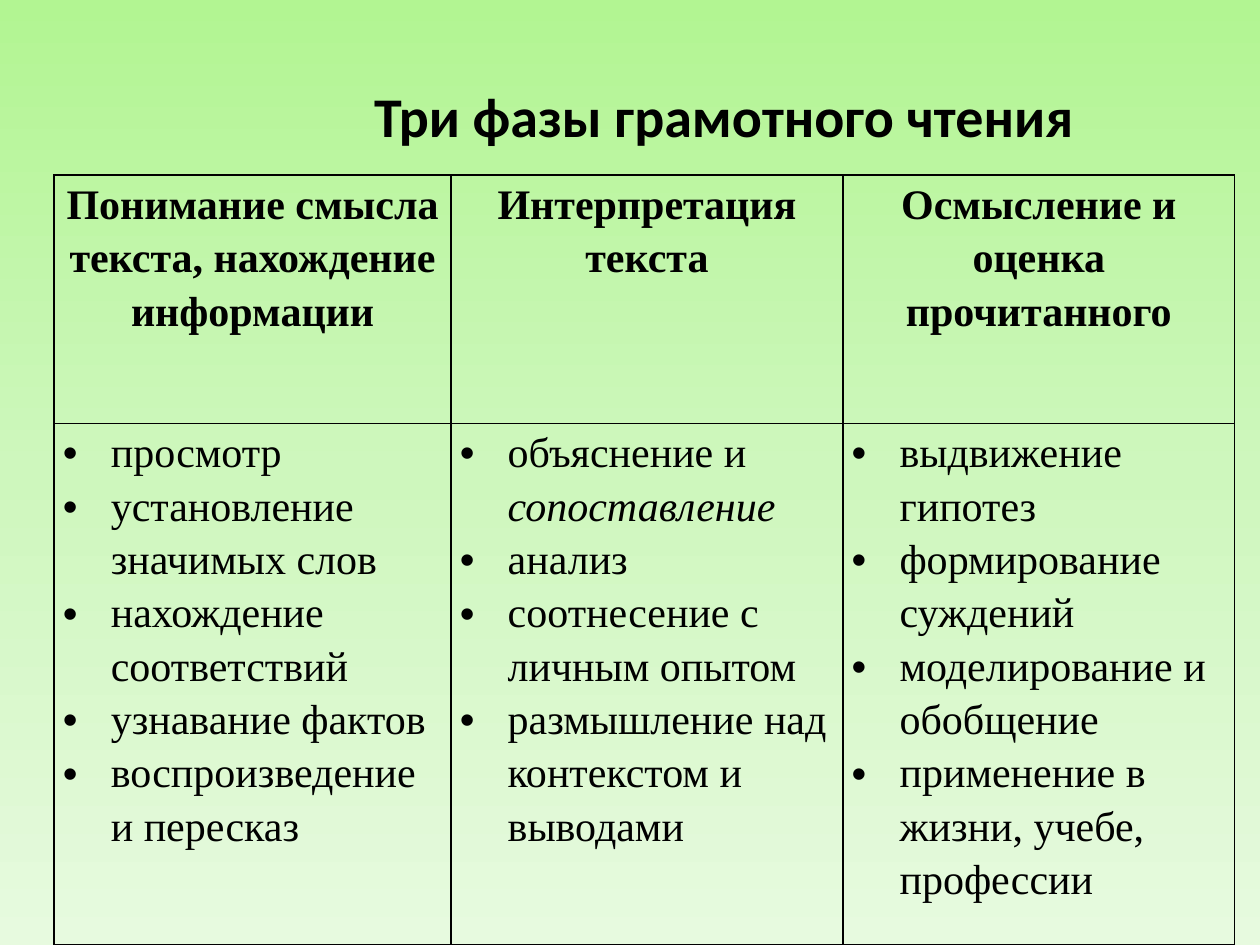
from copy import deepcopy

from lxml import etree
from pptx import Presentation
from pptx import util as u
from pptx.dml.color import RGBColor
from pptx.enum import text
from pptx.oxml import ns

INK = "000000"
HEADS = [
    "Понимание смысла текста, нахождение информации",
    "Интерпретация текста",
    "Осмысление и оценка прочитанного",
]
SKILLS = [
    ["просмотр", "установление значимых слов", "нахождение соответствий",
     "узнавание фактов", "воспроизведение и пересказ"],
    ["объяснение и *сопоставление", "анализ", "соотнесение с личным опытом",
     "размышление над контекстом и выводами"],
    ["выдвижение гипотез", "формирование суждений", "моделирование и обобщение",
     "применение в жизни, учебе, профессии"],
]


def color(code):
    return RGBColor.from_string(code)


def add(node, tag, **attrs):
    return etree.SubElement(node, ns.qn(tag), attrs)


def style(para, face, size, bold):
    font = para.font
    font.name, font.size, font.bold = face, u.Pt(size), bold
    font.color.rgb = color(INK)


def paint(slide):
    fill = slide.background.fill
    fill.gradient()
    fill.gradient_angle = 270
    for stop, code in zip(fill.gradient_stops, ["B2F592", "E7FADF"]):
        stop.color.rgb = color(code)
    stops = slide.element.find(".//" + ns.qn("a:gsLst"))
    stops.insert(1, deepcopy(stops[0]))
    middle = fill.gradient_stops[1]
    middle.position = 0.5
    middle.color.rgb = color("CEF7BD")


def title(slide, left, top, width, height):
    frame = slide.shapes.add_textbox(left, top, width, height).text_frame
    frame.word_wrap = False
    frame.auto_size = text.MSO_AUTO_SIZE.SHAPE_TO_FIT_TEXT
    para = frame.paragraphs[0]
    para.text = "Три фазы грамотного чтения"
    style(para, "Calibri", 32, True)


def border(cell):
    props = cell._tc.get_or_add_tcPr()
    for side in "LRTB":
        line = add(props, f"a:ln{side}", w=str(u.Pt(1)))
        add(add(line, "a:solidFill"), "a:srgbClr", val=INK)


def bullet(para):
    props = para._p.get_or_add_pPr()
    indent = u.Inches(0.38)
    props.set("marL", str(indent))
    props.set("indent", str(-indent))
    add(props, "a:buFont", typeface="Arial")
    add(props, "a:buChar", char="•")


def write(cell, items, head):
    border(cell)
    cell.fill.background()
    cell.margin_left = cell.margin_right = u.Inches(0.07)
    cell.margin_top = cell.margin_bottom = 0
    frame = cell.text_frame
    for i, item in enumerate(items):
        para = frame.add_paragraph() if i else frame.paragraphs[0]
        para.line_spacing = 1.15
        if head:
            para.alignment = text.PP_ALIGN.CENTER
        else:
            bullet(para)
        style(para, "Times New Roman", 24, head)
        plain, _, slant = item.partition("*")
        para.add_run().text = plain
        if slant:
            run = para.add_run()
            run.text = slant
            run.font.italic = True


def phases(slide, left, top, width, height):
    table = slide.shapes.add_table(2, 3, left, top, width, height).table
    table.first_row = table.horz_banding = False
    side = u.Inches(3.11)
    for col, size in zip(table.columns, [width - 2 * side, side, side]):
        col.width = size
    first = u.Inches(1.97)
    table.rows[0].height = first
    table.rows[1].height = height - first
    for i, (head, skills) in enumerate(zip(HEADS, SKILLS)):
        write(table.cell(0, i), [head], True)
        write(table.cell(1, i), skills, False)


def main():
    deck = Presentation()
    deck.slide_width, deck.slide_height = u.Inches(10), u.Inches(7.5)
    slide = deck.slides.add_slide(deck.slide_layouts[6])
    paint(slide)
    title(slide, u.Inches(2.87), u.Inches(0.6), u.Inches(5.81), u.Inches(0.64))
    phases(slide, u.Inches(0.43), u.Inches(1.39), u.Inches(9.37), u.Inches(6.11))
    deck.save("out.pptx")


if __name__ == "__main__":
    main()
